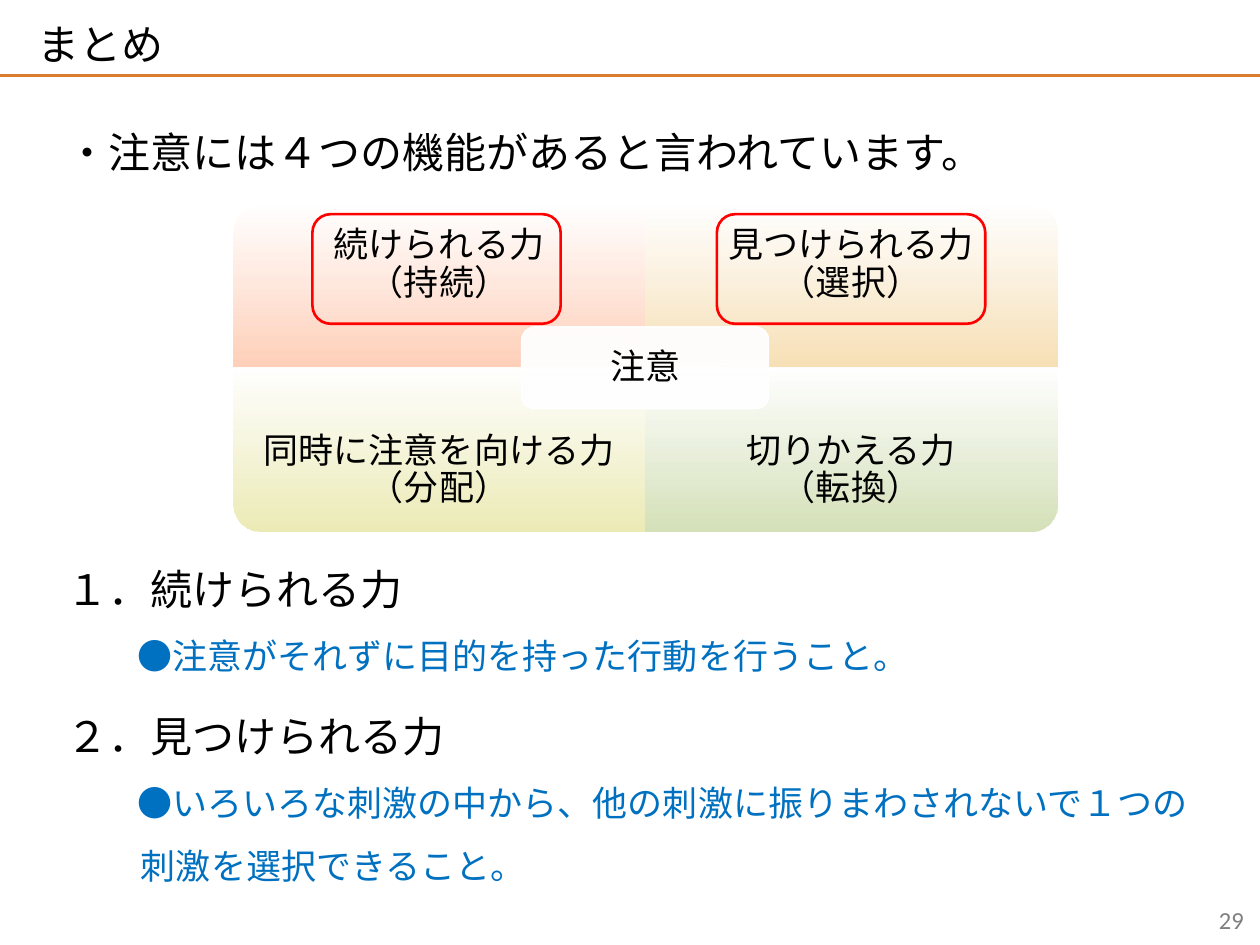
from dataclasses import dataclass

from pptx import Presentation
from pptx.dml.color import RGBColor
from pptx.enum.shapes import MSO_CONNECTOR, MSO_SHAPE
from pptx.enum.text import MSO_ANCHOR, PP_ALIGN
from pptx.oxml.ns import qn
from pptx.oxml.xmlchemy import OxmlElement
from pptx.util import Inches, Pt


@dataclass(frozen=True)
class Theme:
    """Colours, fonts and type sizes of the slide."""
    japanese: str = "Noto Sans CJK JP"
    latin: str = "Calibri"
    ink: str = "000000"
    white: str = "FFFFFF"
    grey: str = "7F7F7F"
    blue: str = "0070C0"
    rule: str = "DC7C2E"
    mark: str = "FF0000"
    sustain: str = "FFD0B9"
    select: str = "F7E0B6"
    divide: str = "ECEBB6"
    switch: str = "D5E1B9"
    heading: int = 24
    label: int = 20
    number: int = 14


THEME = Theme()


def write(paragraph, text, *, size, color=THEME.ink, font=THEME.japanese, align=PP_ALIGN.LEFT,
          spacing=None, before=0, left=0, first=0):
    """Fill a paragraph with formatted text, breaking lines at newlines."""
    properties = paragraph._p.get_or_add_pPr()
    properties.set("marL", str(Inches(left)))
    properties.set("indent", str(Inches(first)))
    paragraph.alignment = align
    paragraph.line_spacing = spacing
    paragraph.space_before = Pt(before)
    for index, line in enumerate(text.split("\n")):
        if index:
            paragraph.add_line_break()
        run = paragraph.add_run()
        run.text = line
        run.font.size = Pt(size)
        run.font.color.rgb = RGBColor.from_string(color)
        run.font.name = font
        east_asian = OxmlElement("a:ea")
        east_asian.set("typeface", font)
        run.font._element.find(qn("a:latin")).addnext(east_asian)


class SlideBuilder:
    """Places styled elements on a grid of 100 columns by 75 rows."""

    def __init__(self, presentation, theme):
        """Add a blank slide and derive the grid from its size."""
        self.theme = theme
        self.column = presentation.slide_width / 100
        self.row = presentation.slide_height / 75
        self.shapes = presentation.slides.add_slide(presentation.slide_layouts[6]).shapes

    def place(self, column, row, columns, rows):
        """Turn a grid area into left, top, width and height."""
        return (round(column * self.column), round(row * self.row),
                round(columns * self.column), round(rows * self.row))

    def text(self, area, paragraphs, anchor=MSO_ANCHOR.MIDDLE, inset=None):
        """Add a text box from pairs of text and format."""
        frame = self.shapes.add_textbox(*self.place(*area)).text_frame
        frame.word_wrap = True
        frame.vertical_anchor = anchor
        if inset is not None:
            frame.margin_left = frame.margin_right = Inches(inset)
            frame.margin_top = frame.margin_bottom = Inches(inset)
        for index, (content, style) in enumerate(paragraphs):
            paragraph = frame.add_paragraph() if index else frame.paragraphs[0]
            write(paragraph, content, **style)

    def label(self, area, content, inset):
        """Add a centred diagram label."""
        style = dict(size=self.theme.label, align=PP_ALIGN.CENTER, spacing=0.9)
        self.text(area, [(content, style)], inset=inset)

    def panel(self, kind, area, color, rotation=0):
        """Add a panel fading downwards from white, covering the area after rotation."""
        column, row, columns, rows = area
        if rotation % 180:
            column, row = column + (columns - rows) / 2, row + (rows - columns) / 2
            columns, rows = rows, columns
        panel = self.shapes.add_shape(kind, *self.place(column, row, columns, rows))
        panel.shadow.inherit = False
        panel.rotation = rotation
        panel.fill.gradient()
        panel.fill.gradient_angle = 270
        for stop, tint in zip(panel.fill.gradient_stops, (self.theme.white, color)):
            stop.color.rgb = RGBColor.from_string(tint)
        gradient = panel._element.spPr.find(qn("a:gradFill"))
        gradient.set("rotWithShape", "0")
        alpha = OxmlElement("a:alpha")
        alpha.set("val", "94000")
        next(gradient.iter(qn("a:srgbClr"))).append(alpha)
        panel.line.fill.background()
        return panel

    def highlight(self, area):
        """Add an unfilled rounded frame."""
        frame = self.shapes.add_shape(MSO_SHAPE.ROUNDED_RECTANGLE, *self.place(*area))
        frame.shadow.inherit = False
        frame.fill.background()
        self.outline(frame, self.theme.mark, 1.5)

    def outline(self, element, color, width):
        """Set line colour and width."""
        element.line.color.rgb = RGBColor.from_string(color)
        element.line.width = Pt(width)

    def rule(self, row):
        """Add a line across the full slide width."""
        left, top, width, _ = self.place(0, row, 100, 0)
        rule = self.shapes.add_connector(MSO_CONNECTOR.STRAIGHT, left, top, left + width, top)
        rule._element.spPr.append(OxmlElement("a:effectLst"))
        self.outline(rule, self.theme.rule, 1.5)


def add_attention_matrix(builder, theme):
    """Draw the four functions of attention around their shared centre."""
    left, top, width, height, label_height = 18.5, 16.2, 32.7, 13, 9.7
    functions = (
        ("続けられる力\n（持続）", theme.sustain, 270),
        ("見つけられる力\n（選択）", theme.select, 0),
        ("同時に注意を向ける力\n（分配）", theme.divide, 180),
        ("切りかえる力\n（転換）", theme.switch, 90),
    )
    for index, (function, color, rotation) in enumerate(functions):
        down, across = divmod(index, 2)
        column, row = left + across * width, top + down * height
        builder.panel(MSO_SHAPE.ROUND_1_RECTANGLE, (column, row, width, height), color, rotation)
        label_row = row + down * (height - label_height)
        builder.label((column, label_row, width, label_height), function, 0.16)
    center = (left + width - 9.8, top + height - 3.25, 19.6, 6.5)
    hub = builder.panel(MSO_SHAPE.ROUNDED_RECTANGLE, center, theme.white)
    builder.outline(hub, theme.white, 0.75)
    builder.label(center, "注意", 0.08)
    for column, columns in ((24.8, 19.7), (56.9, 21.3)):
        builder.highlight((column, 17, columns, 8.7))


def main():
    """Build and save the summary slide."""
    presentation = Presentation()
    presentation.slide_width, presentation.slide_height = Inches(10), Inches(7.5)
    builder = SlideBuilder(presentation, THEME)
    builder.text((2, 0.5, 88.9, 7.1), [("まとめ", dict(size=THEME.heading, spacing=0.6))])
    builder.text((76.4, 71, 23.3, 4), [
        ("29", dict(size=THEME.number, color=THEME.grey, font=THEME.latin, align=PP_ALIGN.RIGHT))])
    builder.rule(6)
    heading = dict(size=THEME.heading, spacing=Pt(36))
    detail = dict(size=THEME.label, color=THEME.blue, spacing=Pt(36), left=0.59, first=-0.03)
    builder.text((4.3, 9.2, 92.1, 63.8), [
        ("・注意には４つの機能があると言われています。", dict(size=THEME.heading, spacing=Pt(31))),
        ("１．続けられる力", dict(heading, before=214)),
        ("●注意がそれずに目的を持った行動を行うこと。", detail),
        ("２．見つけられる力", dict(heading, before=12)),
        ("●いろいろな刺激の中から、他の刺激に振りまわされないで１つの刺激を選択できること。", detail),
    ], anchor=MSO_ANCHOR.TOP)
    add_attention_matrix(builder, THEME)
    presentation.save("out.pptx")


if __name__ == "__main__":
    main()
